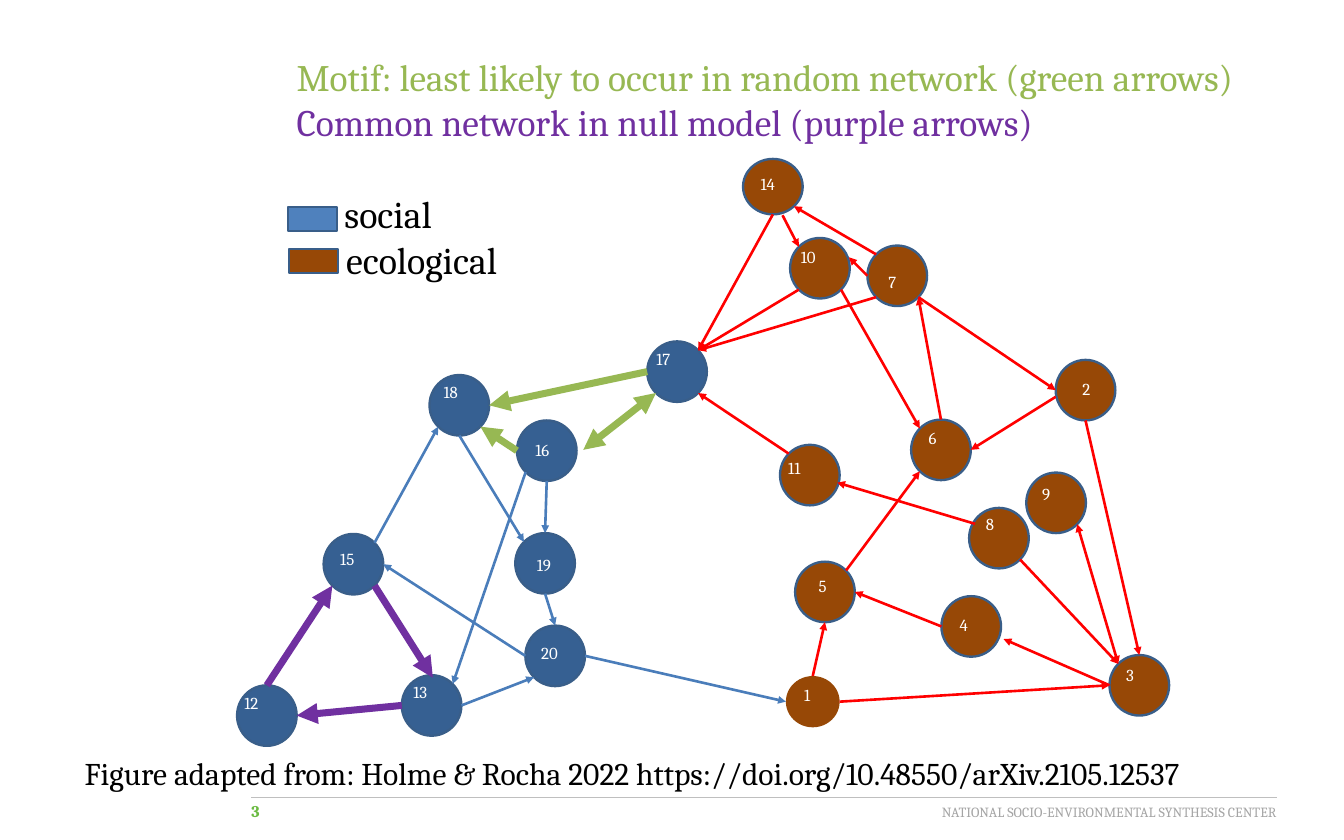
from lxml import etree
from pptx import Presentation
from pptx.dml.color import RGBColor
from pptx.enum import shapes, text
from pptx.oxml import ns
from pptx.util import Inches, Pt

FONT = "Cambria"
BLACK = RGBColor(0x00, 0x00, 0x00)
WHITE = RGBColor(0xFF, 0xFF, 0xFF)
GREY = RGBColor(0xA5, 0xA5, 0xA5)
RULE_GREY = RGBColor(0xBF, 0xBF, 0xBF)
PAGE_GREEN = RGBColor(0x6B, 0xBB, 0x42)
SOCIAL = RGBColor(0x36, 0x60, 0x92)
SOCIAL_KEY = RGBColor(0x4F, 0x81, 0xBD)
ECOLOGICAL = RGBColor(0x97, 0x48, 0x06)
OUTLINE = RGBColor(0x39, 0x5E, 0x89)
RED = RGBColor(0xFF, 0x00, 0x00)
BLUE = RGBColor(0x4A, 0x7D, 0xBA)
GREEN = RGBColor(0x97, 0xB8, 0x53)
PURPLE = RGBColor(0x70, 0x30, 0xA0)

presentation = Presentation()
presentation.slide_width = Inches(15.99)
presentation.slide_height = Inches(9.99)
slide = presentation.slides.add_slide(presentation.slide_layouts[6])


def add_text(box, lines, size, bold=False, align=text.PP_ALIGN.LEFT, inset=0.1):
    """Add a text box; lines holds one (wording, colour) pair per paragraph."""
    frame = slide.shapes.add_textbox(*map(Inches, box)).text_frame
    frame.word_wrap = True
    frame.margin_left = frame.margin_right = Inches(inset)
    for index, (wording, color) in enumerate(lines):
        paragraph = frame.add_paragraph() if index else frame.paragraphs[0]
        paragraph.alignment = align
        run = paragraph.add_run()
        run.text = wording
        run.font.name, run.font.size, run.font.bold = FONT, Pt(size), bold
        run.font.color.rgb = color


def add_line(start, end, color, width, arrowheads=()):
    ends = [Inches(value) for value in (*start, *end)]
    line = slide.shapes.add_connector(shapes.MSO_CONNECTOR.STRAIGHT, *ends)
    line.line.color.rgb = color
    line.line.width = Pt(width)
    for arrowhead in arrowheads:
        etree.SubElement(line.line._get_or_add_ln(), ns.qn(f"a:{arrowhead}"), type="triangle")
    etree.SubElement(line._element.spPr, ns.qn("a:effectLst"))


# Footer
add_text((2.99, 9.48, 0.58, 0.29), [("3", PAGE_GREEN)], 14, bold=True, inset=0)
add_text((10.14, 9.51, 5.05, 0.3),
         [("NATIONAL SOCIO-ENVIRONMENTAL SYNTHESIS CENTER", GREY)], 12,
         align=text.PP_ALIGN.RIGHT, inset=0)
add_line((2.99, 9.48), (15.19, 9.48), RULE_GREY, 0.75)

# Network nodes: number -> left, top, label left, label top
node_places = {
    15: (3.85, 6.35, 3.95, 6.48), 13: (4.78, 8.03, 4.82, 8.06),
    20: (6.25, 7.44, 6.34, 7.6), 18: (5.11, 4.46, 5.18, 4.49),
    17: (7.7, 4.06, 7.71, 4.1), 12: (2.82, 8.15, 2.81, 8.19),
    19: (6.13, 6.34, 6.29, 6.55), 16: (6.15, 5, 6.27, 5.18),
    14: (8.84, 1.89, 8.95, 2.02), 10: (9.4, 2.83, 9.43, 2.88),
    7: (10.32, 2.92, 10.47, 3.18), 5: (9.46, 6.68, 9.64, 6.8),
    11: (9.28, 5.29, 9.28, 5.39), 6: (10.84, 4.99, 10.95, 5.04),
    4: (11.2, 7.09, 11.32, 7.26), 8: (11.53, 6.04, 11.63, 6.06),
    3: (13.2, 7.79, 13.3, 7.86), 2: (12.56, 4.28, 12.78, 4.46),
    9: (12.21, 5.62, 12.3, 5.7), 1: (9.35, 8.04, 9.47, 8.1),
}
node_sizes = {14: (0.71, 0.66), 1: (0.64, 0.61)}
DIAGONAL = 0.3536
compass = {
    "N": (0, -0.5), "S": (0, 0.5), "W": (-0.5, 0), "E": (0.5, 0),
    "NW": (-DIAGONAL, -DIAGONAL), "NE": (DIAGONAL, -DIAGONAL),
    "SW": (-DIAGONAL, DIAGONAL), "SE": (DIAGONAL, DIAGONAL),
}
rim = {}  # (node, compass point) -> position on the circle
for number, (left, top, _, _) in node_places.items():
    width, height = node_sizes.get(number, (0.71, 0.72))
    node = slide.shapes.add_shape(shapes.MSO_SHAPE.OVAL, Inches(left), Inches(top),
                                  Inches(width), Inches(height))
    node.shadow.inherit = False
    node.fill.solid()
    node.fill.fore_color.rgb = SOCIAL if 12 <= number != 14 else ECOLOGICAL
    if number == 1:
        node.line.fill.background()
    else:
        node.line.color.rgb = OUTLINE
        node.line.width = Pt(2)
    for point, (across, down) in compass.items():
        rim[number, point] = (left + width * (0.5 + across), top + height * (0.5 + down))

# Arrows: each end is a (node, compass point) or a free position
arrow_groups = [
    (RED, 2.25, ["tailEnd"], [
        ((11, "NW"), (17, "SE")), ((7, "SW"), (17, "NE")), ((9.31, 2.56), (10, "NW")),
        ((7, "SE"), (2, "W")), ((6, "N"), (7, "SE")), ((10, "SE"), (6, "NW")),
        ((7, "W"), (10.1, 3.06)), ((12.56, 4.72), (6, "E")), ((2, "S"), (3, "N")),
        ((8, "SE"), (3, "NW")), ((7, "NW"), (14, "SE")), ((3, "W"), (11.94, 7.6)),
        ((1, "E"), (3, "W")), ((1, "N"), (5, "S")), ((4, "W"), (5, "E")),
        ((11.6, 6.23), (9.96, 5.74)), ((10, "SW"), (17, "NE")),
        ((5, "NE"), (6, "SW")), ((14, "S"), (17, "NE")),
    ]),
    (RED, 2.25, ["headEnd", "tailEnd"], [((3, "NW"), (9, "SE"))]),
    (BLUE, 2.25, ["tailEnd"], [
        ((15, "NE"), (18, "SW")), ((20, "W"), (15, "E")), ((16, "S"), (19, "N")),
        ((18, "S"), (19, "NW")), ((13, "E"), (20, "SW")), ((19, "S"), (20, "N")),
        ((16, "SW"), (13, "NE")), ((20, "E"), (1, "W")),
    ]),
    (GREEN, 6, ["tailEnd"], [((17, "W"), (18, "E")), ((16, "W"), (18, "SE"))]),
    (GREEN, 6, ["headEnd", "tailEnd"], [((17, "SW"), (6.94, 5.35))]),
    (PURPLE, 6, ["tailEnd"], [
        ((15, "SE"), (5.15, 8.06)), ((13, "W"), (12, "E")), ((12, "N"), (15, "SW")),
    ]),
]
for color, width, arrowheads, arrows in arrow_groups:
    for start, end in arrows:
        add_line(rim.get(start, start), rim.get(end, end), color, width, arrowheads)

for number, (_, _, left, top) in node_places.items():
    label_width = 0.66 if number > 9 else 0.49
    add_text((left, top, label_width, 0.34), [(str(number), WHITE)], 14.4)

# Legend
legend = [
    ("social", SOCIAL_KEY, (3.43, 2.46), (4, 2.22, 1.5, 0.65)),
    ("ecological", ECOLOGICAL, (3.44, 2.96), (4.02, 2.76, 2.58, 0.65)),
]
for name, color, (left, top), label_box in legend:
    key = slide.shapes.add_shape(shapes.MSO_SHAPE.RECTANGLE, Inches(left), Inches(top),
                                 Inches(0.58), Inches(0.29))
    key.shadow.inherit = False
    key.fill.solid()
    key.fill.fore_color.rgb = color
    key.line.color.rgb = OUTLINE
    key.line.width = Pt(2)
    add_text(label_box, [(name, BLACK)], 32.4)

# Citation and title
add_text((0.91, 8.92, 15, 0.56),
         [("Figure adapted from: Holme & Rocha 2022 https://doi.org/10.48550/arXiv.2105.12537",
           BLACK)], 27)
add_text((3.43, 0.6, 12.06, 1.41),
         [("Motif: least likely to occur in random network (green arrows)", GREEN),
          ("Common network in null model (purple arrows)", PURPLE)], 32)

presentation.save("out.pptx")
